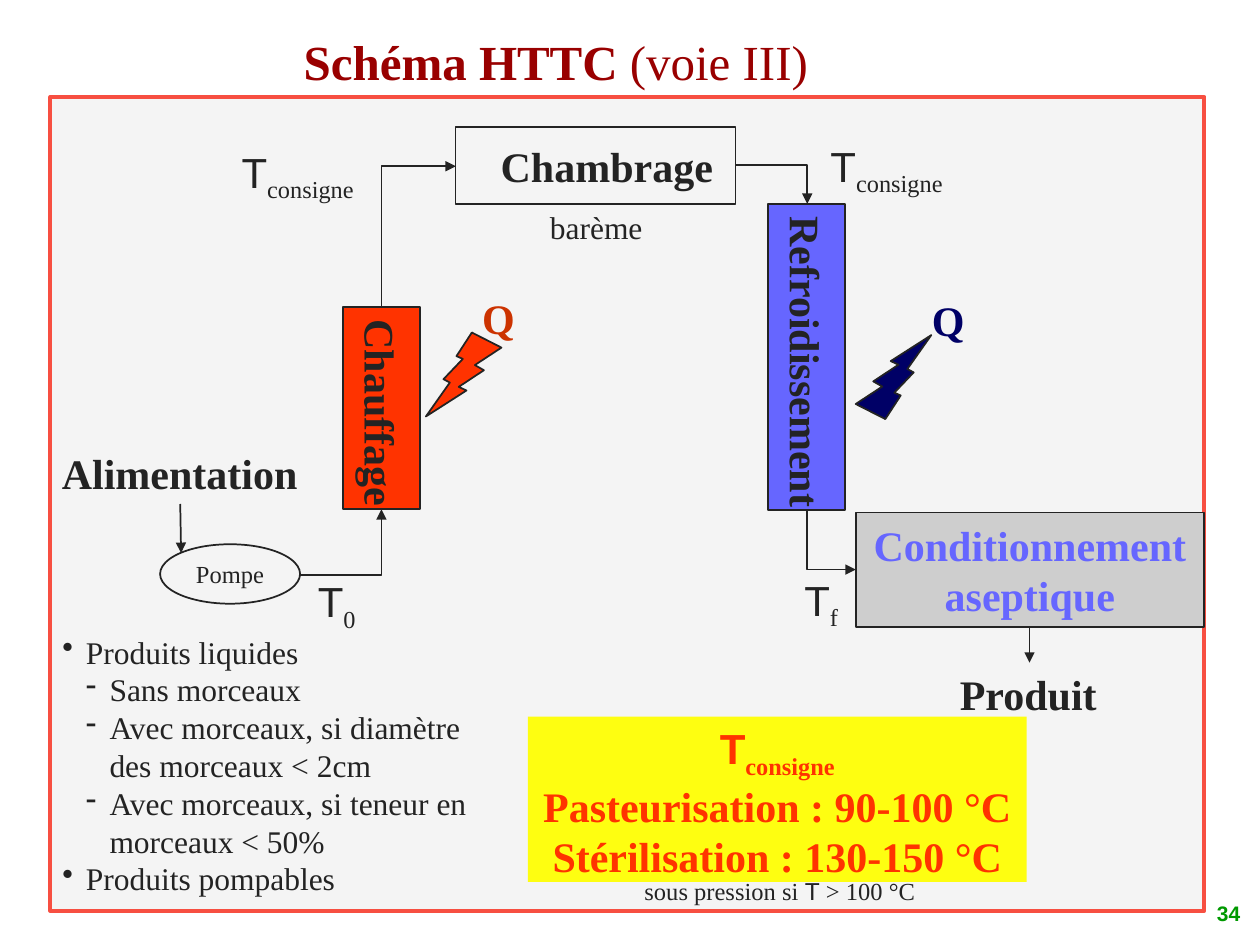
from lxml import etree
from pptx import Presentation
from pptx import util as u
from pptx.dml.color import RGBColor
from pptx.enum import shapes, text
from pptx.oxml.ns import qn

Pt = u.Pt
SHAPE = shapes.MSO_SHAPE
CENTER = text.PP_ALIGN.CENTER
MIDDLE = text.MSO_ANCHOR.MIDDLE
INK, RED, BLUE, NAVY = "232323", "FF3300", "6666FF", "000066"


def rgb(value):
    return RGBColor.from_string(value)


def symbol(sub, **style):
    """Runs for a temperature: T with a lowered index."""
    return [("Τ", dict(style, name="Arial")), (sub, dict(style, base=-25))]


class Diagram:
    base = dict(name="Times New Roman", size=24, color=INK, bold=False)

    def __init__(self, slide):
        self.s = slide

    def paragraph(self, p, runs, style, align=None):
        p.alignment = align
        for content, own in ([(runs, {})] if isinstance(runs, str) else runs):
            look = {**self.base, **style, **own}
            r = p.add_run()
            r.text = content
            formats = dict(name=look["name"], size=Pt(look["size"]), bold=look["bold"])
            for key, value in formats.items():
                setattr(r.font, key, value)
            r.font.color.rgb = rgb(look["color"])
            if "base" in look:
                r.font._element.set("baseline", str(look["base"] * 1000))

    def fill_text(self, sp, paragraphs, align=None, wrap=False, anchor=None,
                  grow=True, **style):
        tf = sp.text_frame
        fit = text.MSO_AUTO_SIZE
        formats = dict(word_wrap=wrap, vertical_anchor=anchor,
                       auto_size=fit.SHAPE_TO_FIT_TEXT if grow else fit.NONE)
        for key, value in formats.items():
            setattr(tf, key, value)
        for i, runs in enumerate(paragraphs):
            p = tf.add_paragraph() if i else tf.paragraphs[0]
            self.paragraph(p, runs, style, align)
        return tf

    def shape(self, kind, box, fill=None, line=INK, width=1, flip=None):
        sp = self.s.shapes.add_shape(kind, *map(Pt, box))
        sp.shadow.inherit = False
        if fill:
            sp.fill.solid()
            sp.fill.fore_color.rgb = rgb(fill)
        else:
            sp.fill.background()
        if line:
            sp.line.color.rgb = rgb(line)
            sp.line.width = Pt(width)
        else:
            sp.line.fill.background()
        if flip:
            sp._element.spPr.find(qn("a:xfrm")).set(flip, "1")
        return sp

    def step(self, box, label, kind=SHAPE.RECTANGLE, fill=None, vertical=False,
             wrap=False, **style):
        """A process step: outlined shape with a centred label."""
        sp = self.shape(kind, box, fill)
        tf = self.fill_text(sp, [label], CENTER, wrap, MIDDLE, **style)
        if vertical:
            tf._txBody.bodyPr.set("vert", "eaVert")
        return tf

    def label(self, box, *paragraphs, **style):
        sp = self.s.shapes.add_textbox(*map(Pt, box))
        return self.fill_text(sp, paragraphs, **style)

    def bullets(self, box, items, **style):
        tf = self.label(box, *[content for _, content in items], wrap=True, **style)
        for p, (level, _) in zip(tf.paragraphs, items):
            pPr = p._p.get_or_add_pPr()
            pPr.set("marL", str(Pt(13.5 * (level + 1))))
            pPr.set("indent", str(Pt(-13.5)))
            etree.SubElement(pPr, qn("a:buChar")).set("char", "•-"[level])

    def arrow(self, x1, y1, x2, y2, bend=None):
        """Straight arrow, or one corner: bend is the first direction, "h" or "v"."""
        kinds = shapes.MSO_CONNECTOR
        start, end = (x1, y1), (x2, y2)
        if bend == "v":
            # A quarter turn about the centre makes the first leg vertical.
            cx, cy = (x1 + x2) / 2, (y1 + y2) / 2
            dx, dy = (y1 - y2) / 2, (x2 - x1) / 2
            start, end = (cx - dx, cy - dy), (cx + dx, cy + dy)
        c = self.s.shapes.add_connector(kinds.ELBOW if bend else kinds.STRAIGHT,
                                        *map(Pt, start + end))
        c.line.color.rgb = rgb(INK)
        c.line.width = Pt(1)
        spPr = c._element.spPr
        if bend:
            spPr.find(qn("a:prstGeom")).set("prst", "bentConnector2")
        if bend == "v":
            spPr.find(qn("a:xfrm")).set("rot", "16200000")
        etree.SubElement(spPr.find(qn("a:ln")), qn("a:tailEnd")).set("type", "triangle")
        etree.SubElement(spPr, qn("a:effectLst"))


def main():
    prs = Presentation()
    prs.slide_width, prs.slide_height = Pt(720), Pt(540)
    d = Diagram(prs.slides.add_slide(prs.slide_layouts[6]))

    number = d.shape(SHAPE.OVAL, (684, 510, 30, 24), "FFFFFF", None)
    d.fill_text(number, ["34"], text.PP_ALIGN.LEFT, anchor=MIDDLE, grow=False,
                name="Arial", size=12, color="009900", bold=True)
    d.shape(SHAPE.RECTANGLE, (28.8, 55.5, 659.5, 465), "F4F4F4", "F74F41", 2.25)
    d.label((166.5, 14.5, 310, 41),
            [("Schéma HTTC ", dict(bold=True)), ("(voie III)", {})],
            size=28, color="990000")

    targets = d.shape(SHAPE.RECTANGLE, (301.7, 409.5, 285, 94.5), "FEFE11", None)
    d.fill_text(targets, [symbol("consigne"), "Pasteurisation : 90-100 °C",
                          "Stérilisation : 130-150 °C"],
                CENTER, anchor=text.MSO_ANCHOR.TOP, color=RED, bold=True)

    d.step((196, 175.5, 44, 115.5), "Chauffage", fill=RED, vertical=True, bold=True)
    d.step((91.5, 311, 80, 34), "Pompe", SHAPE.OVAL, wrap=True, size=14)
    d.step((439, 116.5, 44, 175), "Refroidissement", fill=BLUE, vertical=True, bold=True)
    d.step((489, 292.8, 199, 65.5), "Conditionnement aseptique", fill="CECECE",
           wrap=True, color=BLUE, bold=True)
    holding = d.step((260.3, 72.5, 160, 44), "Chambrage", wrap=True, bold=True)
    holding.margin_left = Pt(20)

    d.arrow(171.5, 328.5, 218, 291, "h")
    d.arrow(218, 175.5, 260.5, 95, "v")
    d.arrow(420.5, 94.5, 461.3, 116.5, "h")
    d.arrow(461.3, 291.5, 489, 325.5, "v")

    for box, word in (((28.3, 252, 149, 36), "Alimentation"),
                      ((541.4, 378.7, 93, 36), "Produit")):
        d.label(box, word, bold=True)

    for bolt, flip, fill, box, color in (
            ((243.4, 190, 43.2, 48), "flipH", RED, (268.5, 163.5, 33, 36), "CC3300"),
            ((489, 191.5, 43.2, 48), "flipV", NAVY, (525.5, 165, 33, 36), NAVY)):
        d.shape(SHAPE.LIGHTNING_BOLT, bolt, fill, flip=flip)
        d.label(box, "Q", color=color, bold=True)

    for x, y, w, sub in ((131, 80, 86.5, "consigne"), (174.5, 325.5, 37.5, "0"),
                         (467.5, 76.5, 86.5, "consigne"), (452.5, 324.7, 34.5, "f")):
        d.label((x, y, w, 36), symbol(sub))

    d.label((306.7, 115.2, 68, 29), "barème", align=CENTER, size=18)
    d.label((361.2, 497, 169, 24),
            [("sous pression si ", {}), ("Τ", dict(name="Arial")), (" > 100 °C", {})],
            size=14)
    d.bullets((28.5, 358, 267, 160), [
        (0, "Produits liquides"),
        (1, "Sans morceaux"),
        (1, "Avec morceaux, si diamètre des morceaux < 2cm"),
        (1, "Avec morceaux, si teneur en morceaux < 50%"),
        (0, "Produits pompables")], size=18)

    d.arrow(588.3, 358.3, 588.3, 378.7)
    d.arrow(103, 288, 103.5, 316)
    prs.save("out.pptx")


if __name__ == "__main__":
    main()
